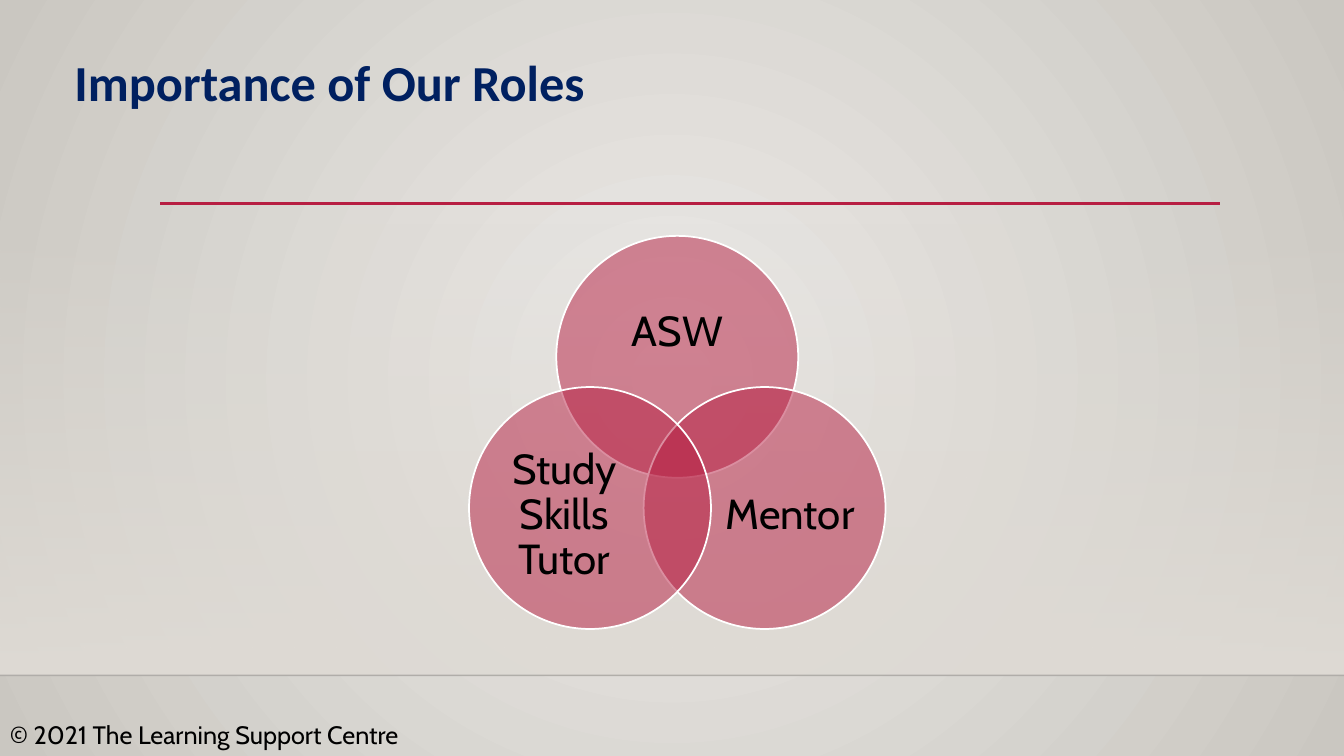
"""Build a slide with three overlapping support roles."""
from math import cos, radians, sin

from lxml import etree
from pptx import Presentation
from pptx.dml.color import RGBColor
from pptx.enum.shapes import MSO_CONNECTOR, MSO_SHAPE
from pptx.enum.text import MSO_ANCHOR, PP_ALIGN
from pptx.oxml.ns import qn
from pptx.util import Pt

RECT = MSO_SHAPE.RECTANGLE
OVAL = MSO_SHAPE.OVAL
STRAIGHT = MSO_CONNECTOR.STRAIGHT
MIDDLE = MSO_ANCHOR.MIDDLE
TOP = MSO_ANCHOR.TOP
LEFT = PP_ALIGN.LEFT
CENTER = PP_ALIGN.CENTER

WIDTH, HEIGHT = 960, 540
FLOOR = 482.4
RED = "B71E42"
MID_X, MID_Y = 483.8, 326.9
REACH = 72
SIZE = 172.8
ROLES = [
    ("ASW", -90, (420.5, 198.7, 126.7, 77.8)),
    ("Mentor", 30, (512.6, 321.1, 103.7, 95)),
    ("Study Skills Tutor", 150, (351.4, 321.1, 103.7, 95)),
]


def color(code):
    """Return the colour for a hex string."""
    return RGBColor.from_string(code)


def fade(node, *levels):
    """Set the opacity percent of the colours in a node, in order."""
    for tint, level in zip(node.iter(qn("a:srgbClr")), levels):
        etree.SubElement(tint, qn("a:alpha")).set("val", str(level * 1000))


def blend(fill, *codes):
    """Give a fill a gradient of two colours."""
    fill.gradient()
    for stop, code in zip(fill.gradient_stops, codes):
        stop.color.rgb = color(code)


def add_back(slide):
    """Paint the round background gradient."""
    blend(slide.background.fill, "ECEAE7", "CAC7C1")
    line = next(slide._element.iter(qn("a:lin")))
    path = etree.Element(qn("a:path"), path="circle")
    etree.SubElement(path, qn("a:fillToRect"), l="50000", t="50000",
                     r="50000", b="50000")
    line.getparent().replace(line, path)


def add_wall(slide):
    """Add the band that fades in down to the floor line."""
    top = 159.1
    wall = slide.shapes.add_shape(RECT, 0, Pt(top), Pt(WIDTH), Pt(FLOOR - top))
    wall.shadow.inherit = False
    wall.line.fill.background()
    blend(wall.fill, "DFDBD5", "DFDBD5")
    wall.fill.gradient_angle = 270
    fade(wall._element.spPr, 0, 100)


def add_rule(slide, left, right, top, code, weight, level=100):
    """Add a level line across the slide."""
    rule = slide.shapes.add_connector(STRAIGHT, Pt(left), Pt(top), Pt(right), Pt(top))
    rule.line.color.rgb = color(code)
    rule.line.width = Pt(weight)
    props = rule._element.spPr
    fade(props, level)
    etree.SubElement(props, qn("a:effectLst"))


def add_text(slide, text, box, size=18, font="Cabin", code="000000", bold=False,
             align=LEFT, anchor=TOP, inset=(7.2, 3.6), space=1):
    """Add a text box."""
    frame = slide.shapes.add_textbox(*map(Pt, box)).text_frame
    frame.word_wrap = True
    frame.vertical_anchor = anchor
    frame.margin_left = frame.margin_right = Pt(inset[0])
    frame.margin_top = frame.margin_bottom = Pt(inset[1])
    para = frame.paragraphs[0]
    para.alignment = align
    para.line_spacing = space
    run = para.add_run()
    run.text = text
    run.font.size = Pt(size)
    run.font.name = font
    run.font.bold = bold
    run.font.color.rgb = color(code)


def add_role(slide, name, angle, box):
    """Add a see-through circle around the centre, with its label."""
    turn = radians(angle)
    left = MID_X + REACH * cos(turn) - SIZE / 2
    top = MID_Y + REACH * sin(turn) - SIZE / 2
    disc = slide.shapes.add_shape(OVAL, Pt(left), Pt(top), Pt(SIZE), Pt(SIZE))
    disc.shadow.inherit = False
    disc.fill.solid()
    disc.fill.fore_color.rgb = color(RED)
    disc.line.color.rgb = color("FFFFFF")
    disc.line.width = Pt(1.25)
    fade(disc._element.spPr, 50)
    add_text(slide, name, box, size=30, align=CENTER, anchor=MIDDLE,
             inset=(0, 0), space=0.9)


def main():
    """Build and save the slide."""
    deck = Presentation()
    deck.slide_width, deck.slide_height = Pt(WIDTH), Pt(HEIGHT)
    slide = deck.slides.add_slide(deck.slide_layouts[6])
    add_back(slide)
    add_wall(slide)
    add_rule(slide, 0, WIDTH, FLOOR, "000001", 1, level=20)
    add_rule(slide, 114.5, 871.2, 145.4, RED, 2.5)
    add_text(slide, "Importance of Our Roles", (46.1, 33.1, 786.9, 51.1), size=36,
             font="Calibri", code="002060", bold=True)
    add_text(slide, "© 2021 The Learning Support Centre", (0, 510.5, 336.2, 29.1))
    for role in ROLES:
        add_role(slide, *role)
    deck.save("out.pptx")


if __name__ == "__main__":
    main()
